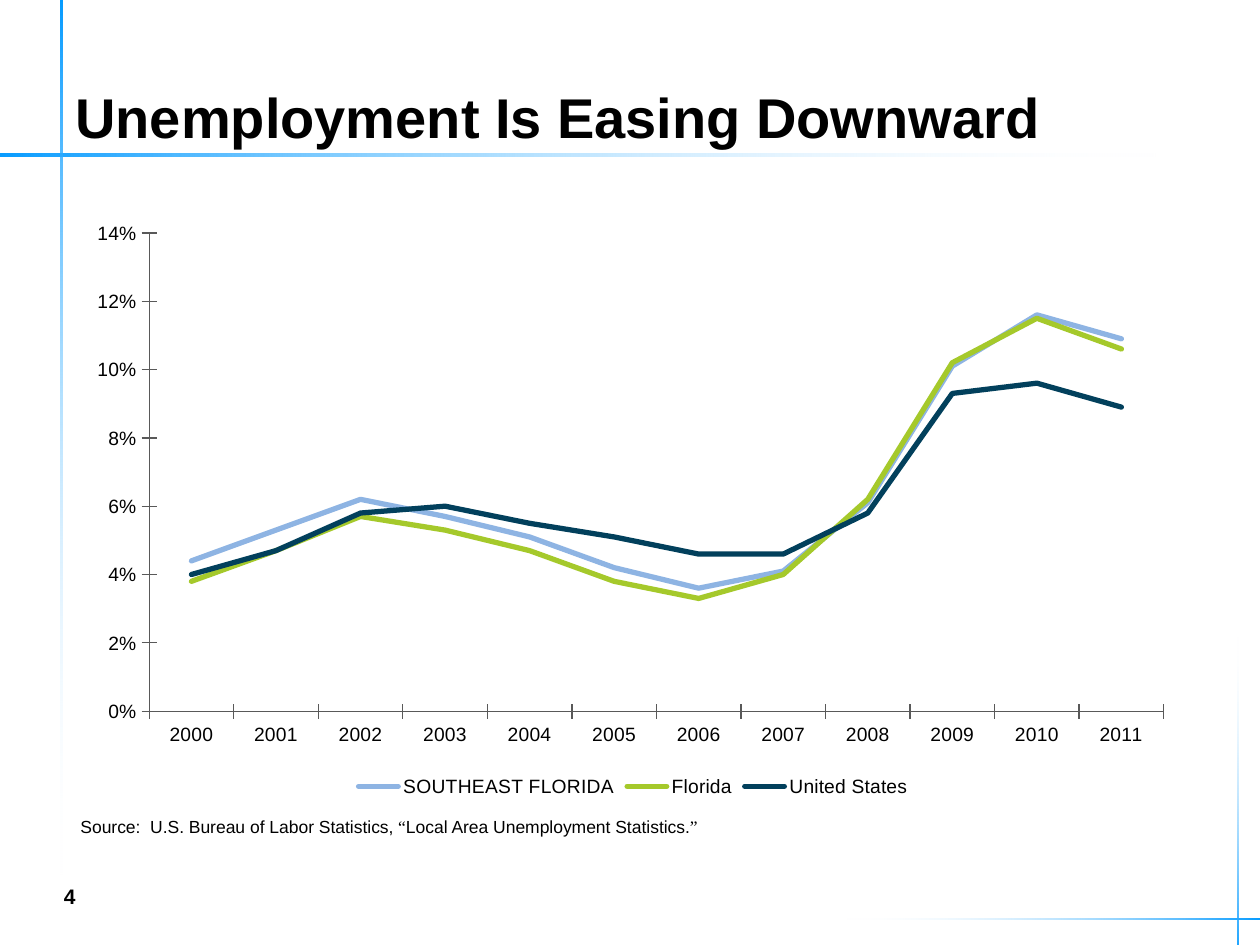
from lxml import etree
from pptx import Presentation
from pptx import util as u
from pptx.chart.data import CategoryChartData
from pptx.dml.color import RGBColor
from pptx.enum import chart as ch, shapes, text
from pptx.oxml import parse_xml
from pptx.oxml.ns import nsdecls, qn

BLACK, WHITE, BLUE, GREY = "000000", "FFFFFF", "0099FF", "595959"
YEARS = [str(year) for year in range(2000, 2012)]
UNEMPLOYMENT = [
    ("SOUTHEAST FLORIDA", "8EB4E3",
     [0.044, 0.053, 0.062, 0.057, 0.051, 0.042, 0.036, 0.041, 0.061, 0.101, 0.116, 0.109]),
    ("Florida", "A5C92B",
     [0.038, 0.047, 0.057, 0.053, 0.047, 0.038, 0.033, 0.04, 0.062, 0.102, 0.115, 0.106]),
    ("United States", "02405C",
     [0.04, 0.047, 0.058, 0.06, 0.055, 0.051, 0.046, 0.046, 0.058, 0.093, 0.096, 0.089]),
]
# left, top, width, height, rotation
FADING_RULES = [
    (4.52, -3.47, 0.02, 9.4, 270),
    (0.48, -0.09, 0.02, 7.07, 0),
    (8.38, 5.62, 0.01, 3.35, 90),
    (9.82, 5.04, 0.01, 2.64, 180),
]


def color(hex_code):
    return RGBColor.from_string(hex_code)


def inches(box):
    return [u.Inches(length) for length in box]


def add_fading_rule(page, box, rotation):
    """Thin bar that fades from blue at its top to clear, then is rotated."""
    rule = page.shapes.add_shape(shapes.MSO_SHAPE.RECTANGLE, *inches(box))
    rule.shadow.inherit = False
    rule.rotation = rotation
    rule.line.fill.background()
    rule.fill.gradient()
    rule.fill.gradient_angle = 270
    for stop, hex_code, position in zip(rule.fill.gradient_stops, (BLUE, WHITE), (0, 1)):
        stop.color.rgb = color(hex_code)
        stop.position = position
    clear = rule._element.spPr.findall(".//" + qn("a:srgbClr"))[-1]
    etree.SubElement(clear, qn("a:alpha"), val="0")


def add_text(page, box, spans, size, bold=False, anchor=text.MSO_ANCHOR.TOP):
    """Left-aligned line of text made of (wording, font name) spans."""
    frame = page.shapes.add_textbox(*inches(box)).text_frame
    frame.word_wrap = True
    frame.vertical_anchor = anchor
    para = frame.paragraphs[0]
    para.font.size = u.Pt(size)
    para.font.bold = bold
    para.font.color.rgb = color(BLACK)
    for wording, font_name in spans:
        span = para.add_run()
        span.text = wording
        span.font.name = font_name


def place_plot(chart, left, top, width, height):
    """Fix the inner plot area, in fractions of the chart."""
    lengths = "".join(f'<c:{tag} val="{value}"/>' for tag, value in
                      zip("xywh", (left, top, width, height)))
    layout = parse_xml(
        f'<c:layout {nsdecls("c")}><c:manualLayout><c:layoutTarget val="inner"/>'
        f'<c:xMode val="edge"/><c:yMode val="edge"/>{lengths}</c:manualLayout></c:layout>')
    plot_area = chart._chartSpace.chart.plotArea
    for old in plot_area.findall(qn("c:layout")):
        plot_area.remove(old)
    plot_area.insert(0, layout)


def add_unemployment_chart(page, box):
    data = CategoryChartData(number_format="0%")
    data.categories = YEARS
    for name, _, rates in UNEMPLOYMENT:
        data.add_series(name, rates)
    chart = page.shapes.add_chart(ch.XL_CHART_TYPE.LINE, *inches(box), data).chart
    chart.has_title = False
    chart.font.name = "Arial"
    chart.font.size = u.Pt(11)
    chart.font.color.rgb = color(BLACK)
    chart.has_legend = True
    chart.legend.position = ch.XL_LEGEND_POSITION.BOTTOM
    chart.legend.include_in_layout = False
    place_plot(chart, 0.065, 0.019, 0.912, 0.824)

    for axis in (chart.category_axis, chart.value_axis):
        axis.has_major_gridlines = False
        axis.major_tick_mark = ch.XL_TICK_MARK.CROSS
        axis.minor_tick_mark = ch.XL_TICK_MARK.NONE
        axis.format.line.color.rgb = color(GREY)
        axis.format.line.width = u.Pt(0.75)
    rates_axis = chart.value_axis
    rates_axis.minimum_scale, rates_axis.maximum_scale = 0, 0.14
    rates_axis.major_unit = 0.02
    rates_axis.tick_labels.number_format = "0%"
    rates_axis.tick_labels.number_format_is_linked = False

    plot = chart.plots[0]
    plot.vary_by_categories = False
    for series, (_, hex_code, _) in zip(plot.series, UNEMPLOYMENT):
        series.smooth = False
        series.marker.style = ch.XL_MARKER_STYLE.NONE
        series.format.line.color.rgb = color(hex_code)
        series.format.line.width = u.Pt(3)
        series._element.find(qn("c:spPr")).find(qn("a:ln")).set("cap", "rnd")


def main():
    deck = Presentation()
    deck.slide_width, deck.slide_height = u.Inches(10), u.Inches(7.5)
    page = deck.slides.add_slide(deck.slide_layouts[6])
    for *box, rotation in FADING_RULES:
        add_fading_rule(page, box, rotation)
    add_text(page, (0.5, -0.01, 9, 1.25), [("Unemployment Is Easing Downward", "Arial")],
             32, bold=True, anchor=text.MSO_ANCHOR.BOTTOM)
    add_text(page, (0.41, 6.91, 0.73, 0.4), [("4", "Arial")],
             12, bold=True, anchor=text.MSO_ANCHOR.MIDDLE)
    add_text(page, (0.54, 6.43, 5.49, 0.27), [
        ("Source:  U.S. Bureau of Labor Statistics, ", "Arial"),
        ("“", "Times New Roman"),
        ("Local Area Unemployment Statistics.", "Arial"),
        ("”", "Times New Roman"),
    ], 10)
    add_unemployment_chart(page, (0.61, 1.76, 8.83, 4.61))
    deck.save("out.pptx")


if __name__ == "__main__":
    main()
